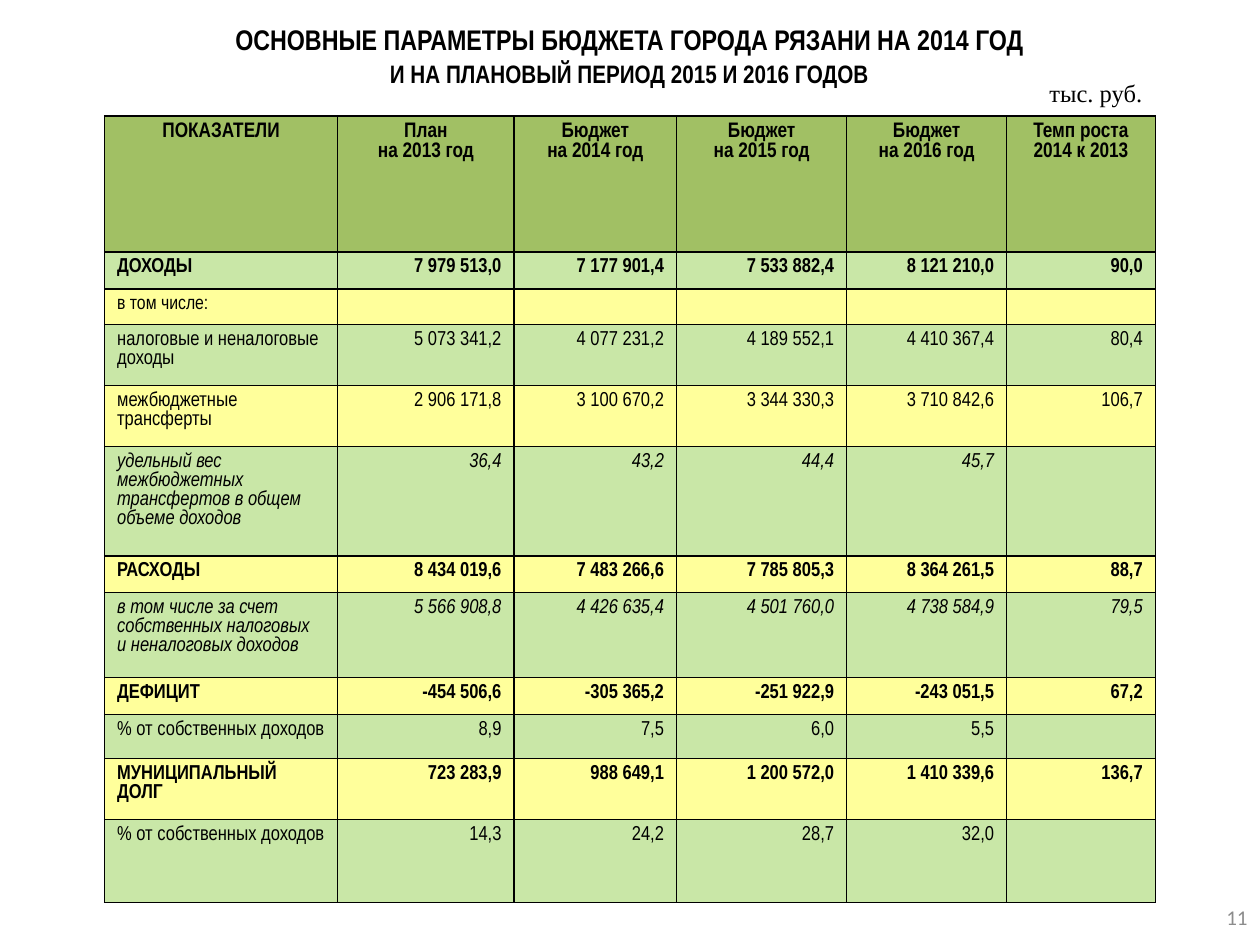
from lxml.etree import SubElement
from pptx import Presentation
from pptx.dml.color import RGBColor
from pptx.enum.text import MSO_ANCHOR, PP_ALIGN
from pptx.oxml.ns import qn
from pptx.util import Inches, Pt

NARROW = "Arial Narrow"
BLACK, HEADER_GREEN, GREEN, YELLOW = "000000", "A1C064", "C9E7A7", "FFFF9B"
COLUMN_WIDTHS = [1.85, 1.4, 1.29, 1.35, 1.27, 1.18]
HEADINGS = ["ПОКАЗАТЕЛИ", "План\nна 2013 год", "Бюджет\nна 2014 год",
            "Бюджет\nна 2015 год", "Бюджет\nна 2016 год", "Темп роста 2014 к 2013"]

# Row height, style (b bold, i italic), indicator, values
INDICATORS = [
    (0.29, "b", "ДОХОДЫ",
     ["7 979 513,0", "7 177 901,4", "7 533 882,4", "8 121 210,0", "90,0"]),
    (0.25, "", "в том числе:", [""] * 5),
    (0.47, "", "налоговые и неналоговые доходы",
     ["5 073 341,2", "4 077 231,2", "4 189 552,1", "4 410 367,4", "80,4"]),
    (0.47, "", "межбюджетные трансферты",
     ["2 906 171,8", "3 100 670,2", "3 344 330,3", "3 710 842,6", "106,7"]),
    (0.82, "i", "удельный вес межбюджетных трансфертов в общем объеме доходов",
     ["36,4", "43,2", "44,4", "45,7", ""]),
    (0.29, "b", "РАСХОДЫ",
     ["8 434 019,6", "7 483 266,6", "7 785 805,3", "8 364 261,5", "88,7"]),
    (0.61, "i", "в том числе за счет собственных налоговых\nи неналоговых доходов",
     ["5 566 908,8", "4 426 635,4", "4 501 760,0", "4 738 584,9", "79,5"]),
    (0.29, "b", "ДЕФИЦИТ",
     ["-454 506,6", "-305 365,2", "-251 922,9", "-243 051,5", "67,2"]),
    (0.35, "", "% от собственных доходов", ["8,9", "7,5", "6,0", "5,5", ""]),
    (0.47, "b", "МУНИЦИПАЛЬНЫЙ ДОЛГ",
     ["723 283,9", "988 649,1", "1 200 572,0", "1 410 339,6", "136,7"]),
    (0.66, "", "% от собственных доходов", ["14,3", "24,2", "28,7", "32,0", ""]),
]


def color(hex_code):
    return RGBColor.from_string(hex_code)


def add_run(paragraph, text, size, font=NARROW, ink=BLACK, style=""):
    run = paragraph.add_run()
    run.text = text
    run.font.name = font
    run.font.size = Pt(size)
    run.font.bold = "b" in style
    run.font.italic = "i" in style
    run.font.color.rgb = color(ink)


def add_text_frame(slide, left, top, width, height, wrap=True):
    box = slide.shapes.add_textbox(Inches(left), Inches(top), Inches(width), Inches(height))
    box.text_frame.word_wrap = wrap
    return box.text_frame


def set_borders(cell):
    properties = cell._tc.get_or_add_tcPr()
    for position, side in enumerate(("lnL", "lnR", "lnT", "lnB")):
        line = properties.makeelement(qn(f"a:{side}"), {"w": str(Pt(1))})
        fill = SubElement(line, qn("a:solidFill"))
        SubElement(fill, qn("a:srgbClr"), val=BLACK)
        properties.insert(position, line)


def fill_cell(cell, text, size, style, align, background):
    cell.fill.solid()
    cell.fill.fore_color.rgb = color(background)
    set_borders(cell)
    frame = cell.text_frame
    for number, line in enumerate(text.split("\n")):
        paragraph = frame.add_paragraph() if number else frame.paragraphs[0]
        paragraph.alignment = align
        if line:
            add_run(paragraph, line, size, style=style)
        else:
            # A small size keeps an empty cell from stretching its row
            SubElement(paragraph._p, qn("a:endParaRPr"), sz="800")


def add_title(slide):
    frame = add_text_frame(slide, 0.43, 0.13, 9.13, 0.47)
    heading = frame.paragraphs[0]
    subheading = frame.add_paragraph()
    subheading.space_before = Pt(1)
    for paragraph in (heading, subheading):
        paragraph.alignment = PP_ALIGN.CENTER
    add_run(heading, "ОСНОВНЫЕ ПАРАМЕТРЫ БЮДЖЕТА ГОРОДА РЯЗАНИ НА 2014 ГОД", 16.2, style="b")
    add_run(subheading, "И НА ПЛАНОВЫЙ ПЕРИОД 2015 И 2016 ГОДОВ", 14.4, style="b")


def add_budget_table(slide):
    heights = [1.08] + [row[0] for row in INDICATORS]
    table = slide.shapes.add_table(
        len(heights), len(COLUMN_WIDTHS), Inches(0.83), Inches(0.92),
        Inches(sum(COLUMN_WIDTHS)), Inches(sum(heights))).table
    for column, width in zip(table.columns, COLUMN_WIDTHS):
        column.width = Inches(width)
    for row, height in zip(table.rows, heights):
        row.height = Inches(height)

    # Heading row
    for column, heading in enumerate(HEADINGS):
        fill_cell(table.cell(0, column), heading, 12, "b", PP_ALIGN.CENTER, HEADER_GREEN)

    # Indicator rows in alternating colours
    for row, (_, style, indicator, values) in enumerate(INDICATORS, start=1):
        background = GREEN if row % 2 else YELLOW
        size = 11.5 if any(values) else 11
        for column, text in enumerate([indicator] + values):
            align = PP_ALIGN.RIGHT if column else PP_ALIGN.LEFT
            fill_cell(table.cell(row, column), text, size, style, align, background)


def add_unit(slide):
    frame = add_text_frame(slide, 8.23, 0.57, 0.94, 0.34, wrap=False)
    add_run(frame.paragraphs[0], "тыс. руб.", 14, "Times New Roman")


def add_page_number(slide):
    frame = add_text_frame(slide, 7.67, 7.08, 2.33, 0.4)
    frame.vertical_anchor = MSO_ANCHOR.MIDDLE
    frame.paragraphs[0].alignment = PP_ALIGN.RIGHT
    add_run(frame.paragraphs[0], "11", 12, "Calibri", "8C8C8C")


def main():
    presentation = Presentation()
    presentation.slide_width = Inches(10)
    presentation.slide_height = Inches(7.5)
    slide = presentation.slides.add_slide(presentation.slide_layouts[6])
    add_title(slide)
    add_budget_table(slide)
    add_unit(slide)
    add_page_number(slide)
    presentation.save("out.pptx")


if __name__ == "__main__":
    main()
